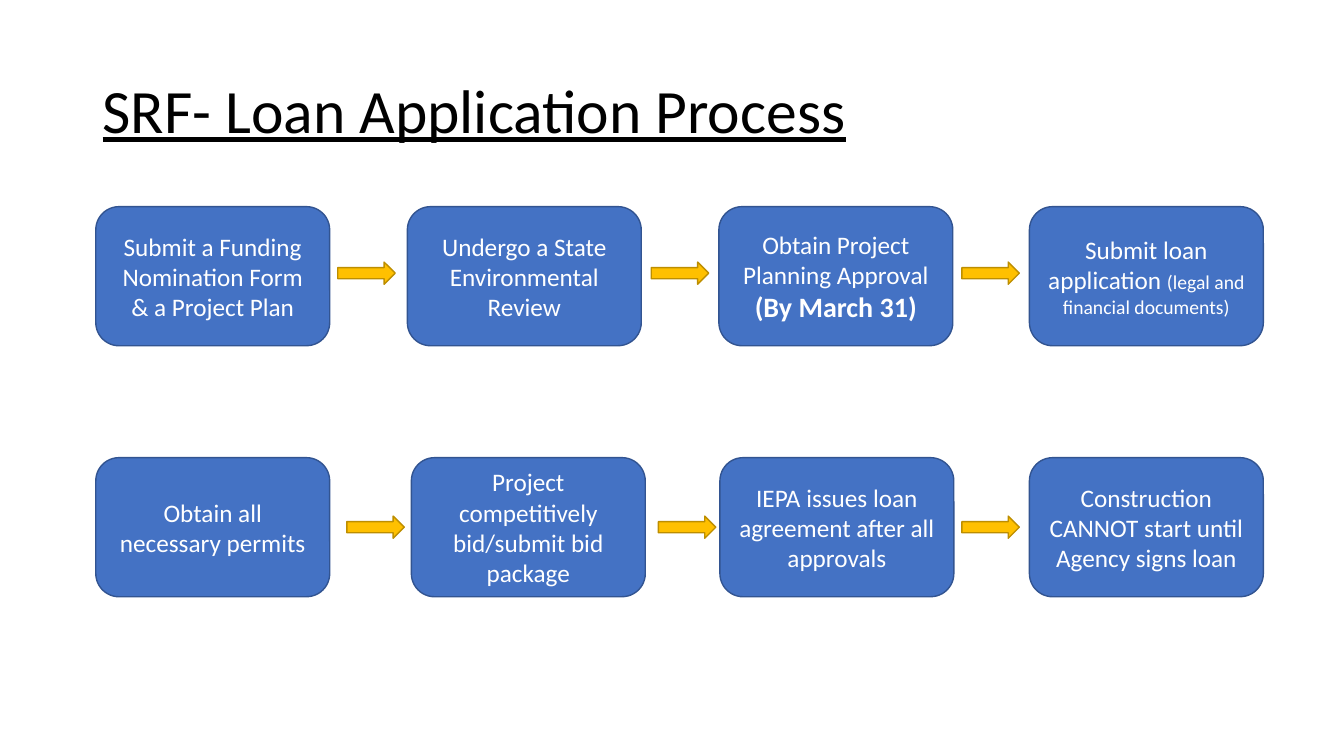
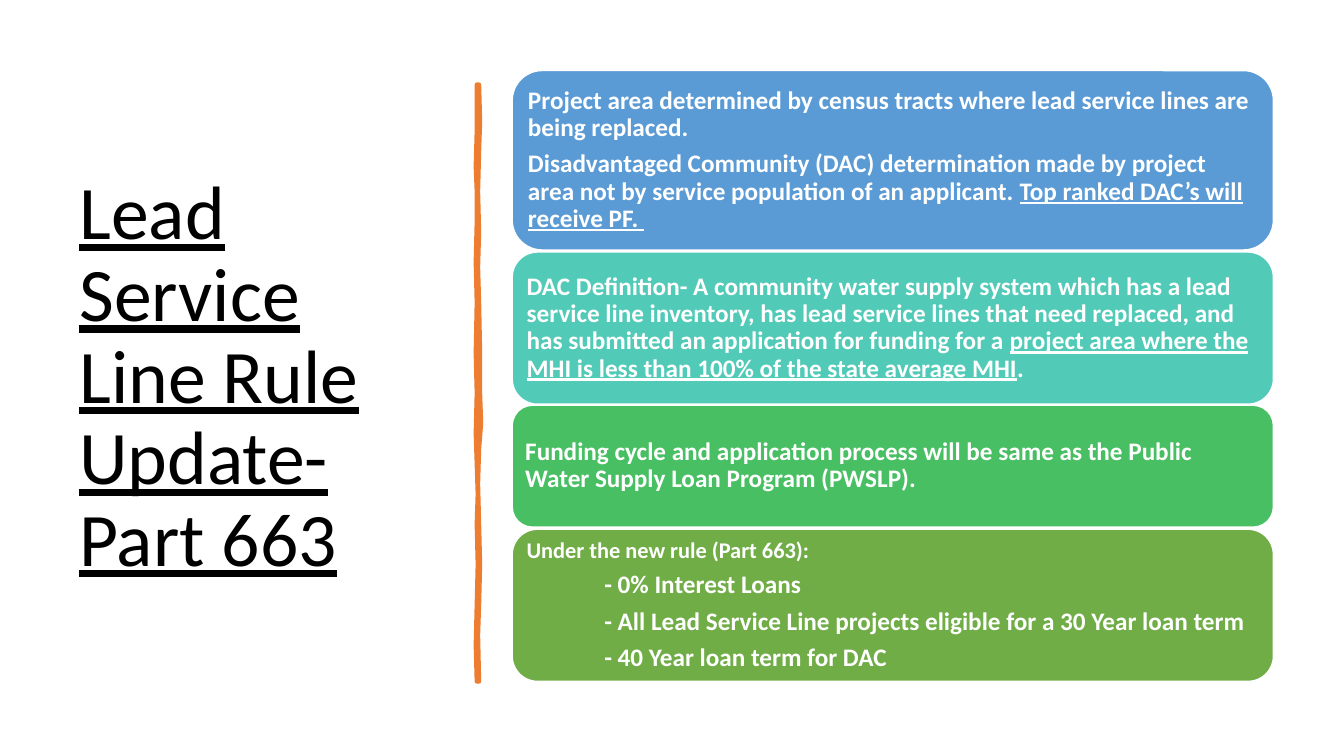
from pptx import Presentation
from pptx.dml.color import RGBColor
from pptx.enum.shapes import MSO_SHAPE
from pptx.enum.text import MSO_ANCHOR, PP_ALIGN
from pptx.util import Pt

ROUNDED = MSO_SHAPE.ROUNDED_RECTANGLE
ARROW = MSO_SHAPE.RIGHT_ARROW
MIDDLE = MSO_ANCHOR.MIDDLE
LEFT = PP_ALIGN.LEFT
CENTER = PP_ALIGN.CENTER

PX = 9144
FONT = "Calibri"
BLACK = RGBColor(0x00, 0x00, 0x00)
WHITE = RGBColor(0xFF, 0xFF, 0xFF)
BLUE = RGBColor(0x44, 0x72, 0xC4)
BLUE_EDGE = RGBColor(0x32, 0x54, 0x91)
GOLD = RGBColor(0xFF, 0xC0, 0x00)
GOLD_EDGE = RGBColor(0xBD, 0x8E, 0x00)
ORANGE = RGBColor(0xED, 0x7D, 0x31)
SKY = RGBColor(0x5B, 0x9B, 0xD5)
TEAL = RGBColor(0x52, 0xCA, 0xB8)
GREEN = RGBColor(0x49, 0xBF, 0x64)
OLIVE = RGBColor(0x70, 0xAD, 0x47)


def write(sp, paragraphs, size=18, color=WHITE, bold=False, underline=False,
          align=LEFT, spacing=None, after=0, inset=None):
    tf = sp.text_frame
    tf.word_wrap = True
    tf.vertical_anchor = MIDDLE
    if inset is not None:
        tf.margin_left = tf.margin_right = inset * PX
        tf.margin_top = tf.margin_bottom = inset * PX
    for i, runs in enumerate(paragraphs):
        p = tf.paragraphs[0] if i == 0 else tf.add_paragraph()
        p.alignment = align
        p.line_spacing = spacing
        p.space_after = Pt(after)
        for text, changes in runs:
            look = {"size": size, "bold": bold, "underline": underline} | changes
            r = p.add_run()
            r.text = text
            r.font.name = FONT
            r.font.size = Pt(look["size"])
            r.font.bold = look["bold"]
            r.font.underline = look["underline"]
            r.font.color.rgb = color


def add_box(s, kind, x, y, w, h, fill, edge):
    sp = s.shapes.add_shape(kind, x * PX, y * PX, w * PX, h * PX)
    sp.shadow.inherit = False
    sp.fill.solid()
    sp.fill.fore_color.rgb = fill
    sp.line.color.rgb = edge
    sp.line.width = Pt(1)
    return sp


prs = Presentation()
prs.slide_width = 1333 * PX
prs.slide_height = 750 * PX

TITLES = [
    ("SRF- Loan Application Process", 44, (92, 40, 1150, 145)),
    ("Lead Service Line Rule Update- Part 663", 54, (69, 70, 374, 611)),
]
slides = []
for title, size, area in TITLES:
    s = prs.slides.add_slide(prs.slide_layouts[6])
    sp = s.shapes.add_textbox(*[n * PX for n in area])
    write(sp, [[(title, {})]], size=size, color=BLACK, underline=True, spacing=0.9)
    slides.append(s)
process, rule = slides

STEP_ROWS = [
    (205, 260, [335, 646, 954], [
        (95, [[("Submit a Funding Nomination Form & a Project Plan", {})]]),
        (404, [[("Undergo a State Environmental Review", {})]]),
        (713, [[("Obtain Project Planning Approval", {})],
               [("(By March 31)", {"size": 20, "bold": True})]]),
        (1021, [[("Submit loan application ", {}),
                 ("(legal and financial documents)", {"size": 14})]]),
    ]),
    (454, 512, [344, 653, 954], [
        (95, [[("Obtain all necessary permits", {})]]),
        (408, [[("Project competitively bid/submit bid package", {})]]),
        (714, [[("IEPA issues loan agreement after all approvals", {})]]),
        (1021, [[("Construction CANNOT start until Agency signs loan", {})]]),
    ]),
]
for box_y, arrow_y, arrow_xs, steps in STEP_ROWS:
    for x, paragraphs in steps:
        sp = add_box(process, ROUNDED, x, box_y, 232, 138, BLUE, BLUE_EDGE)
        write(sp, paragraphs, align=CENTER)
    for x in arrow_xs:
        add_box(process, ARROW, x, arrow_y, 57, 22, GOLD, GOLD_EDGE)

BRUSH_EDGE = [
    (475, 84), (476, 120), (475, 150), (474, 190), (475, 230), (474, 265),
    (475, 300), (476, 350), (476, 390), (477, 420), (475, 445), (474, 480),
    (475, 520), (476, 560), (475, 600), (474, 630), (475, 676), (473, 676),
    (472, 640), (473, 600), (474, 560), (473, 520), (474, 490), (473, 460),
    (472, 430), (473, 390), (472, 350), (473, 300), (472, 260), (473, 220),
    (473, 190), (472, 165), (473, 130), (473, 84),
]
fb = rule.shapes.build_freeform(*BRUSH_EDGE[0], scale=PX)
fb.add_line_segments(BRUSH_EDGE[1:], close=True)
brush = fb.convert_to_shape()
brush.shadow.inherit = False
brush.fill.solid()
brush.fill.fore_color.rgb = ORANGE
brush.line.color.rgb = ORANGE
brush.line.width = Pt(3.25)

CARDS = [
    (70, 178, SKY, [
        [("Project area determined by census tracts where lead service lines "
          "are being replaced.", {})],
        [("Disadvantaged Community (DAC) determination made by project area "
          "not by service population of an applicant. ", {}),
         ("Top ranked DAC’s will receive PF. ", {"underline": True})],
    ]),
    (250, 151, TEAL, [
        [("DAC Definition- A community water supply system which has a lead "
          "service line inventory, has lead service lines that need replaced, "
          "and has submitted an application for funding for a ", {}),
         ("project area where the MHI is less than 100% of the state average "
          "MHI", {"underline": True}),
         (".", {})],
    ]),
    (402, 121, GREEN, [
        [("Funding cycle and application process will be same as the Public "
          "Water Supply Loan Program (PWSLP).", {})],
    ]),
    (525, 151, OLIVE, [
        [("Under the new rule (Part 663):", {"size": 16})],
        [("- 0% Interest Loans", {})],
        [("- All Lead Service Line projects eligible for a 30 Year loan term", {})],
        [("- 40 Year loan term for DAC", {})],
    ]),
]
for y, h, fill, paragraphs in CARDS:
    sp = add_box(rule, ROUNDED, 508, y, 755, h, fill, WHITE)
    write(sp, paragraphs, bold=True, spacing=0.9, after=6.5, inset=7)
for p in sp.text_frame.paragraphs[1:]:
    p._p.get_or_add_pPr().set("marL", str(77 * PX))

prs.save("out.pptx")
